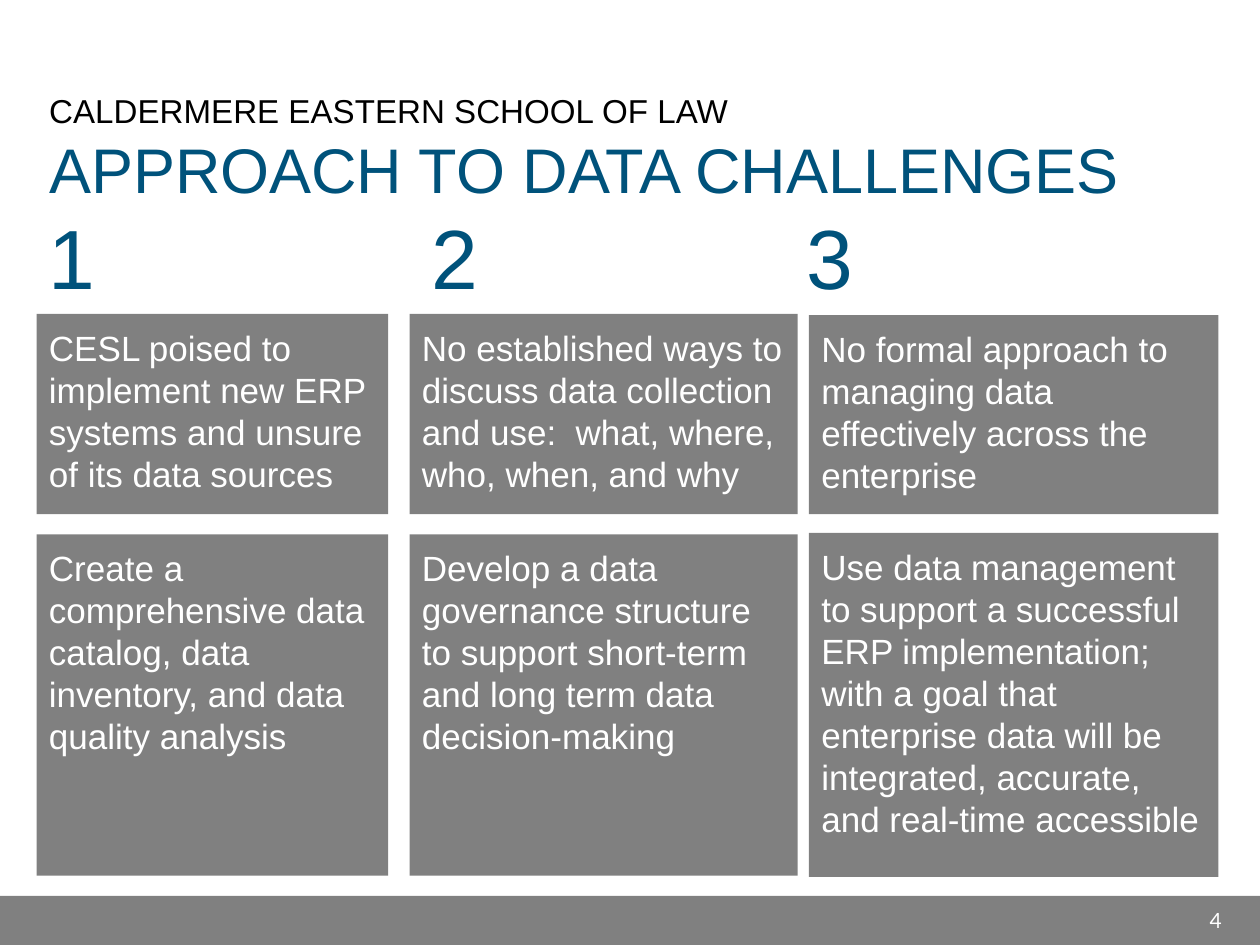
"""Build the slide on the approach to data challenges."""
from dataclasses import dataclass

from pptx import Presentation
from pptx import util as u
from pptx.dml.color import RGBColor
from pptx.enum import shapes, text

COLORS = {"gray": "808080", "blue": "00527B", "white": "FFFFFF", "black": "000000"}
LEFT, TOP = text.PP_ALIGN.LEFT, text.MSO_ANCHOR.TOP
CENTER, MIDDLE = text.PP_ALIGN.CENTER, text.MSO_ANCHOR.MIDDLE


@dataclass
class Box:
    left: float
    top: float
    width: float
    height: float

    def emu(self) -> list:
        return [u.Inches(v) for v in (self.left, self.top, self.width, self.height)]


@dataclass
class Column:
    number: str
    number_left: float
    number_width: float
    challenge: str
    challenge_box: Box
    response: str
    response_box: Box


COLUMNS = [
    Column("1", 0.29, 0.38,
           "CESL poised to implement new ERP systems and unsure of its data sources",
           Box(0.29, 2.49, 2.79, 1.59),
           "Create a comprehensive data catalog, data inventory, and data quality analysis",
           Box(0.29, 4.24, 2.79, 2.71)),
    Column("2", 3.33, 0.42,
           "No established ways to discuss data collection and use:  what, where, "
           "who, when, and why",
           Box(3.25, 2.49, 3.08, 1.59),
           "Develop a data governance structure to support short-term and long term "
           "data decision-making",
           Box(3.25, 4.24, 3.08, 2.71)),
    Column("3", 6.17, 0.83,
           "No formal approach to managing data effectively across the enterprise",
           Box(6.42, 2.5, 3.25, 1.58),
           "Use data management to support a successful ERP implementation; with a goal "
           "that enterprise data will be integrated, accurate, and real-time accessible",
           Box(6.42, 4.23, 3.25, 2.73)),
]


def set_format(obj, values: dict) -> None:
    """Set each named attribute on the object."""
    for name, value in values.items():
        setattr(obj, name, value)


def write(p, words: str, size: float, color: str, align=LEFT, font="Arial") -> None:
    """Write one formatted run into the paragraph."""
    set_format(p, {"alignment": align, "line_spacing": 1.0, "space_before": u.Pt(0)})
    r = p.add_run()
    r.text = words
    set_format(r.font, {"size": u.Pt(size), "name": font})
    r.font.color.rgb = RGBColor.from_string(COLORS[color])


def add_rect(s, box: Box):
    """Add a plain gray rectangle."""
    sp = s.shapes.add_shape(shapes.MSO_SHAPE.RECTANGLE, *box.emu())
    sp.shadow.inherit = False
    sp.fill.solid()
    sp.fill.fore_color.rgb = RGBColor.from_string(COLORS["gray"])
    sp.line.fill.background()
    return sp


def add_panel(s, box: Box, words: str) -> None:
    """Add a gray panel with white text."""
    tf = add_rect(s, box).text_frame
    set_format(tf, {"word_wrap": True, "vertical_anchor": TOP, "margin_top": u.Inches(0.1)})
    write(tf.paragraphs[0], words, 20, "white")


def add_label(s, box: Box, words: str, size: float, color: str, font="Arial", anchor=TOP) -> None:
    """Add a centred text box."""
    tf = s.shapes.add_textbox(*box.emu()).text_frame
    set_format(tf, {"word_wrap": True, "vertical_anchor": anchor})
    write(tf.paragraphs[0], words, size, color, CENTER, font)


def add_title(s, box: Box) -> None:
    """Place the two-line title in its placeholder."""
    sp = s.shapes.title
    set_format(sp, dict(zip(("left", "top", "width", "height"), box.emu())))
    tf = sp.text_frame
    set_format(tf, {"word_wrap": True, "vertical_anchor": TOP,
                    "auto_size": text.MSO_AUTO_SIZE.NONE})
    write(tf.paragraphs[0], "CALDERMERE EASTERN SCHOOL OF LAW", 18.9, "black")
    write(tf.add_paragraph(), "APPROACH TO DATA CHALLENGES", 36, "blue")


def main() -> None:
    """Build and save the slide."""
    prs = Presentation()
    set_format(prs, {"slide_width": u.Inches(10), "slide_height": u.Inches(7.5)})
    s = prs.slides.add_slide(prs.slide_layouts[5])
    add_title(s, Box(0.29, 0.67, 9.01, 1.16))
    add_rect(s, Box(0, 7.11, 10, 0.39))
    add_label(s, Box(9.3, 7.1, 0.7, 0.4), "4", 12, "white", "Lato", MIDDLE)
    for col in COLUMNS:
        add_label(s, Box(col.number_left, 1.58, col.number_width, 0.91), col.number, 48, "blue")
        add_panel(s, col.challenge_box, col.challenge)
        add_panel(s, col.response_box, col.response)
    prs.save("out.pptx")


if __name__ == "__main__":
    main()
